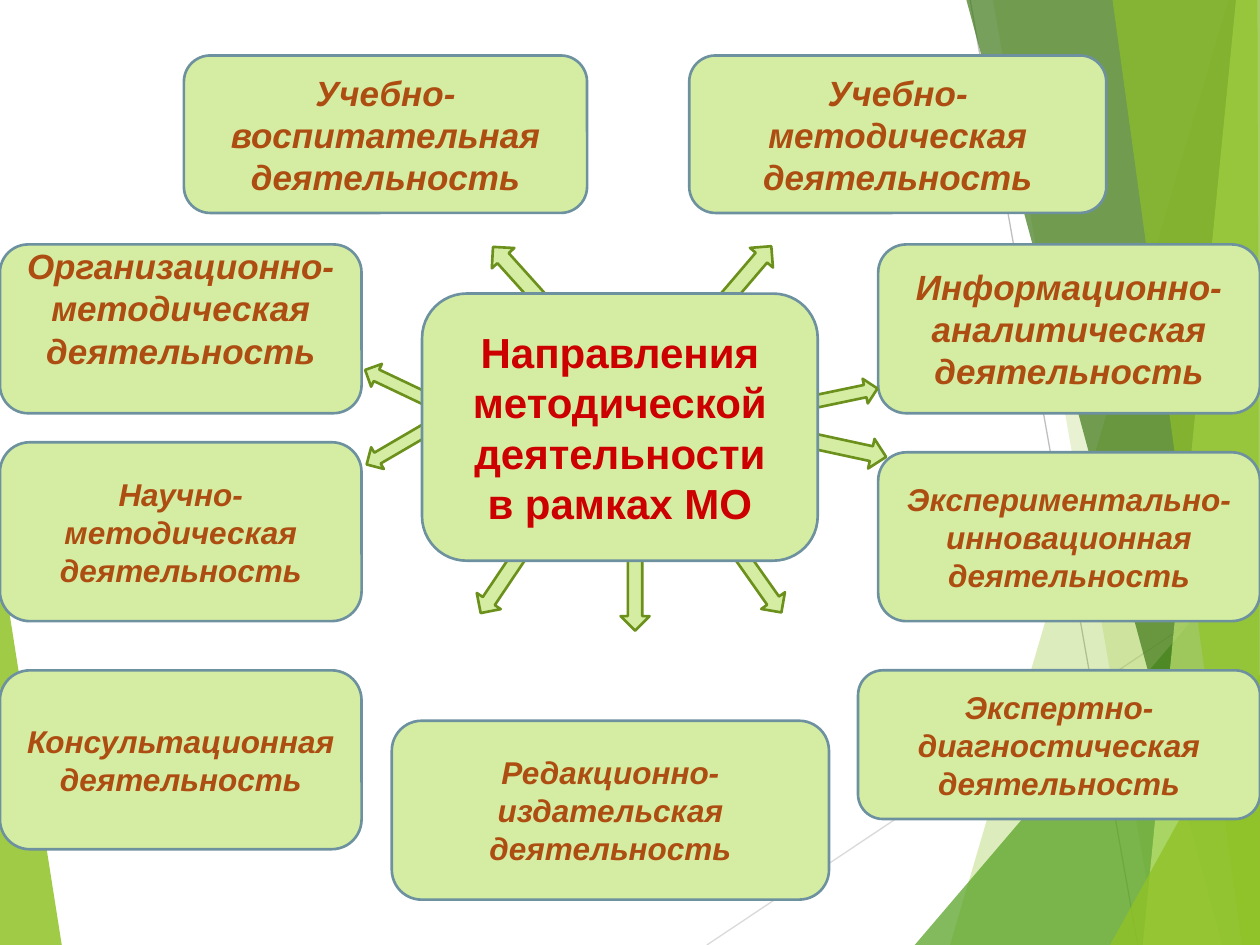
from lxml.etree import SubElement as Sub
from pptx import Presentation
from pptx.dml.color import RGBColor as RGB
from pptx.enum.shapes import MSO_CONNECTOR as Link, MSO_SHAPE as Kind
from pptx.enum.text import MSO_ANCHOR as Anchor, PP_ALIGN as Align
from pptx.oxml.ns import qn
from pptx.util import Inches, Pt

HUES = {
    "lime": "90C226", "green": "54A021", "dark": "3F7819", "pale": "C0E474",
    "box": "D5EDA2", "edge": "6E91A0", "rim": "6B901C",
    "text": "AD4D12", "red": "CC0000", "light": "D9D9D9", "grey": "BFBFBF",
}


def hue(name):
    return RGB.from_string(HUES[name])


def draw(kind, place, edge):
    item = shapes.add_shape(kind, *map(Inches, place))
    item.shadow.inherit = False
    item.fill.solid()
    item.fill.fore_color.rgb = hue("box")
    item.line.color.rgb = hue(edge)
    item.line.width = Pt(1.5)
    return item


deck = Presentation()
deck.slide_width, deck.slide_height = Inches(10), Inches(7.5)
slide = deck.slides.add_slide(deck.slide_layouts[6])
shapes = slide.shapes

lines = [
    (5.61, 7.5, 10, 4.57, "light"),
    (7.7, 0, 9.03, 7.5, "grey"),
]
for *ends, tone in lines:
    line = shapes.add_connector(Link.STRAIGHT, *map(Inches, ends))
    line.line.color.rgb = hue(tone)
    line.line.width = Pt(0.75)
    Sub(line._element.spPr, qn("a:effectLst"))

facets = [
    ("lime", 85, [(0, 4.39), (0.49, 7.5), (0, 7.5)]),
    ("lime", 30, [(9.75, 0), (7.54, 7.5), (10, 7.5), (10, 0)]),
    ("lime", 20, [(7.88, 0), (9.19, 7.5), (10, 7.5), (10, 0)]),
    ("green", 72, [(7.26, 7.5), (10, 4.29), (10, 7.5)]),
    ("dark", 70, [(7.67, 0), (9.7, 7.5), (10, 7.5), (10, 0)]),
    ("pale", 70, [(9.81, 0), (9.07, 7.5), (10, 7.5), (10, 0)]),
    ("lime", 65, [(8.83, 0), (9.86, 7.5), (10, 7.5), (9.98, 0)]),
    ("lime", 80, [(8.81, 7.5), (10, 5.35), (10, 7.5)]),
]
for tone, alpha, spots in facets:
    first, *rest = [(Inches(x), Inches(y)) for x, y in spots]
    form = shapes.build_freeform(*first)
    form.add_line_segments(rest, close=True)
    facet = form.convert_to_shape()
    facet.shadow.inherit = False
    facet.fill.solid()
    facet.fill.fore_color.rgb = hue(tone)
    facet.line.fill.background()
    tint = facet._element.spPr.find(qn("a:solidFill"))[0]
    Sub(tint, qn("a:alpha"), val=str(alpha * 1000))

arrows = [
    (2.87, 2.96, 0.58, 0.2, 205.4),
    (5.65, 4.46, 0.7, 0.23, 54.8),
    (3.81, 2.07, 0.62, 0.24, 228),
    (5.61, 2.07, 0.62, 0.24, 310.5),
    (6.42, 3.04, 0.55, 0.2, 348.2),
    (3.66, 4.46, 0.7, 0.23, 123.9),
    (4.69, 4.54, 0.7, 0.23, 90),
    (2.87, 3.44, 0.58, 0.2, 149.7),
    (6.41, 3.44, 0.63, 0.24, 12.2),
]
boxes = [
    (5.47, 0.44, 3.31, 1.25, 20, "Учебно-методическая деятельность"),
    (6.97, 1.94, 3.03, 1.34, 20, "Информационно-аналитическая деятельность"),
    (6.81, 5.32, 3.19, 1.18, 18, "Экспертно-диагностическая деятельность"),
    (0, 1.94, 2.87, 1.34, 20, "Организационно-методическая деятельность"),
    (1.46, 0.44, 3.2, 1.25, 20, "Учебно-воспитательная деятельность"),
    (0, 5.32, 2.87, 1.42, 18, "Консультационная деятельность"),
    (3.11, 5.72, 3.47, 1.42, 18, "Редакционно-издательская деятельность"),
    (0, 3.51, 2.87, 1.42, 18, "Научно-методическая деятельность"),
    (6.97, 3.59, 3.03, 1.34, 18, "Экспериментально-инновационная деятельность"),
    (3.35, 2.33, 3.14, 2.12, 24,
     "Направления\nметодической\nдеятельности\nв рамках МО"),
]
for *place, size, words in boxes:
    hub = size == 24
    if hub:
        for *area, turn in arrows:
            draw(Kind.STRIPED_RIGHT_ARROW, area, "rim").rotation = turn
    frame = draw(Kind.ROUNDED_RECTANGLE, place, "edge").text_frame
    frame.word_wrap = True
    frame.vertical_anchor = Anchor.MIDDLE
    if words.startswith("Орг"):
        frame.margin_bottom = Inches(0.38)
    for i, part in enumerate(words.split("\n")):
        para = frame.add_paragraph() if i else frame.paragraphs[0]
        para.alignment = Align.CENTER
        run = para.add_run()
        run.text = part
        font = run.font
        font.name, font.size = "Arial", Pt(size)
        font.bold, font.italic = True, not hub
        font.color.rgb = hue("red" if hub else "text")

deck.save("out.pptx")
